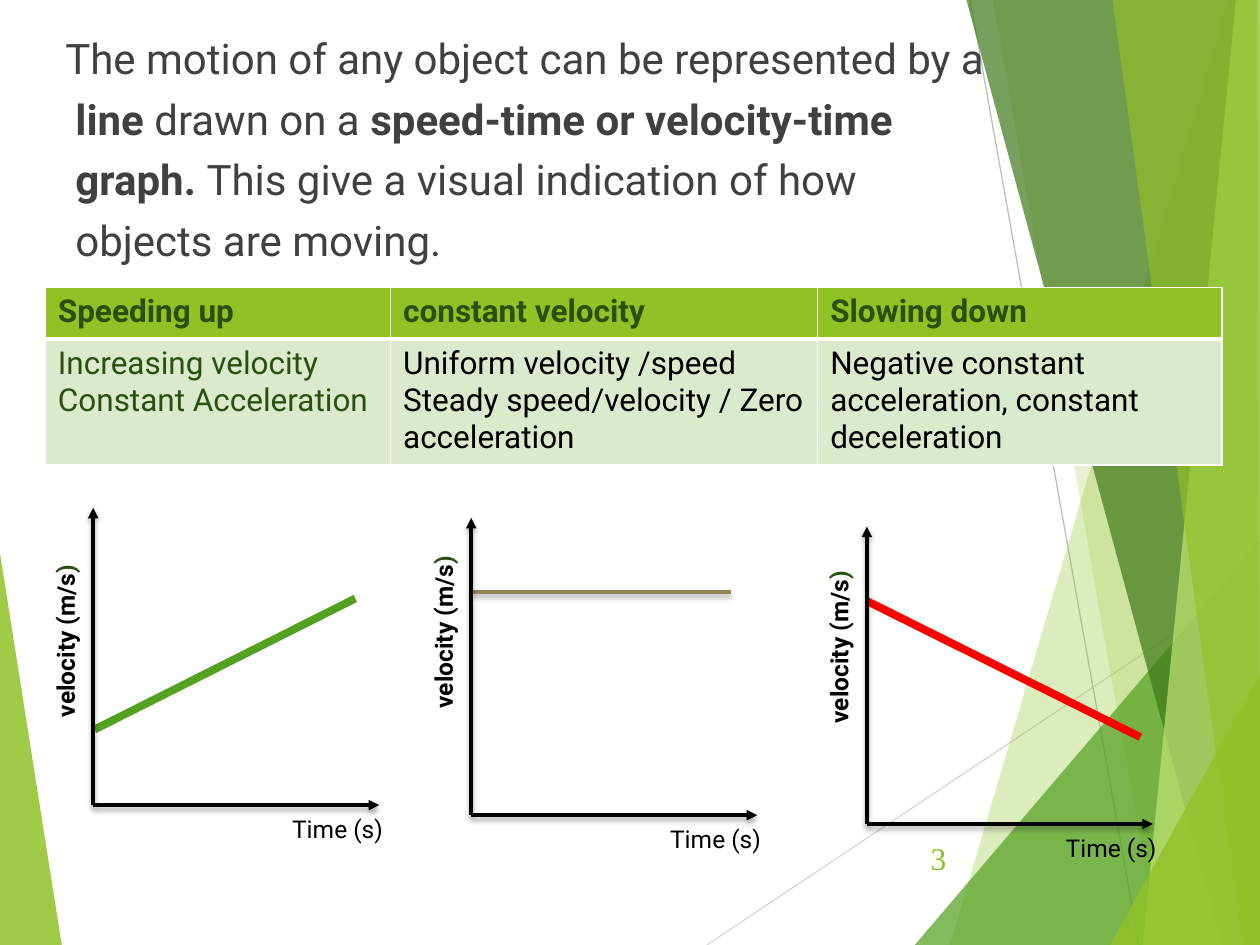
"""Build a slide comparing three velocity-time graphs."""
from lxml import etree
from pptx import Presentation
from pptx.dml.color import RGBColor
from pptx.enum.shapes import MSO_CONNECTOR
from pptx.enum.text import MSO_ANCHOR, PP_ALIGN
from pptx.oxml.ns import qn
from pptx.util import Inches, Pt

STRAIGHT = MSO_CONNECTOR.STRAIGHT
MIDDLE = MSO_ANCHOR.MIDDLE
RIGHT = PP_ALIGN.RIGHT
FONT = "Roboto"
COLORS = {
    "lime": "90C226", "green": "54A021", "forest": "3F7819", "pale": "C0E474",
    "dark": "2A5010", "mint": "DBE9CD", "body": "404040", "black": "000000",
    "white": "FFFFFF", "silver": "D9D9D9", "gray": "BFBFBF",
    "olive": "918655", "red": "FF0000",
}
RGB = {name: RGBColor.from_string(value) for name, value in COLORS.items()}

presentation = Presentation()
presentation.slide_width = Inches(10)
presentation.slide_height = Inches(7.5)
slide = presentation.slides.add_slide(presentation.slide_layouts[6])
shapes = slide.shapes


def add_line(start, end, color, width, arrow=False, shadow=False):
    line = shapes.add_connector(STRAIGHT, *map(Inches, start + end))
    line.line.color.rgb = RGB[color]
    line.line.width = Pt(width)
    properties = line._element.spPr
    if arrow:
        etree.SubElement(properties.find(qn("a:ln")), qn("a:tailEnd"), type="triangle")
    effects = etree.SubElement(properties, qn("a:effectLst"))
    if shadow:
        outer = etree.SubElement(
            effects, qn("a:outerShdw"), blurRad=str(Pt(3)), dist=str(Pt(2)),
            dir="5400000", rotWithShape="0")
        shade = etree.SubElement(outer, qn("a:srgbClr"), val=COLORS["black"])
        etree.SubElement(shade, qn("a:alpha"), val="35000")


def add_text(box, runs, size, color, font=FONT):
    shape = shapes.add_textbox(*map(Inches, box))
    shape.text_frame.word_wrap = True
    paragraph = shape.text_frame.paragraphs[0]
    paragraph.font.size = Pt(size)
    paragraph.font.name = font
    paragraph.font.color.rgb = RGB[color]
    for text, bold in runs:
        run = paragraph.add_run()
        run.text = text
        run.font.bold = bold
    return shape, paragraph


facets = [
    ("lime", 85, [(0, 4.39), (0.49, 7.5), (0, 7.5)]),
    ("lime", 30, [(9.75, 0), (7.54, 7.5), (10, 7.5), (10, 0)]),
    ("lime", 20, [(7.88, 0), (9.19, 7.5), (10, 7.5), (10, 0)]),
    ("green", 72, [(7.26, 7.5), (10, 4.29), (10, 7.5)]),
    ("forest", 70, [(7.67, 0), (9.7, 7.5), (10, 7.5), (10, 0)]),
    ("pale", 70, [(9.81, 0), (9.07, 7.5), (10, 7.5), (10, 0)]),
    ("lime", 65, [(8.83, 0), (9.86, 7.5), (10, 7.5), (9.98, 0)]),
    ("lime", 80, [(8.81, 7.5), (10, 5.35), (10, 7.5)]),
]
add_line((5.61, 7.5), (10, 4.57), "silver", 0.75)
add_line((7.7, 0), (9.04, 7.5), "gray", 0.75)
for color, opacity, points in facets:
    corners = [(Inches(x), Inches(y)) for x, y in points]
    builder = shapes.build_freeform(*corners[0])
    builder.add_line_segments(corners[1:], close=True)
    facet = builder.convert_to_shape()
    facet.shadow.inherit = False
    facet.fill.solid()
    facet.fill.fore_color.rgb = RGB[color]
    facet.line.fill.background()
    fill_color = facet._element.spPr.find(qn("a:solidFill")).find(qn("a:srgbClr"))
    etree.SubElement(fill_color, qn("a:alpha"), val=str(opacity * 1000))

introduction, paragraph = add_text((0.12, 0.13, 7.88, 2.05), [
    ("The motion of any object can be represented by a ", False),
    ("line ", True),
    ("drawn on a ", False),
    ("speed-time or velocity-time graph. ", True),
    ("This give a visual indication of how objects are moving.", False),
], 24, "body")
paragraph.line_spacing = 1.2
paragraph.space_before = Pt(10)
indents = paragraph._p.get_or_add_pPr()
indents.set("marL", str(Inches(0.38)))
indents.set("indent", str(Inches(-0.08)))

number, paragraph = add_text(
    (7.05, 6.61, 0.56, 0.4), [("3", False)], 18, "lime", "Times New Roman")
number.text_frame.vertical_anchor = MIDDLE
paragraph.alignment = RIGHT

graphs = [
    ((0.74, 6.39), (0.75, 5.79), (2.82, 4.75), "green", 4.5, False, 5.79),
    ((3.74, 6.47), (3.74, 4.7), (5.8, 4.7), "olive", 2, True, 5.72),
    ((6.88, 6.54), (6.88, 4.77), (9.05, 5.85), "red", 4.5, False, 5.84),
]
label_width, label_height = 1.88, 0.34
for origin, start, end, color, width, shadow, label_bottom in graphs:
    x, y = origin
    add_line(start, end, color, width, shadow=shadow)
    for tip in ((x, y - 2.36), (x + 2.27, y)):
        add_line(origin, tip, "black", 2, arrow=True, shadow=True)
    add_text((x + 1.48, y + 0.02, 1.28, 0.33), [("Time (s)", False)], 14, "black")
    label_left = x - 0.22 - label_width / 2
    label_top = label_bottom - (label_width + label_height) / 2
    label, paragraph = add_text(
        (label_left, label_top, label_width, label_height),
        [("velocity (m/s", True), (")", True)], 14, "black")
    paragraph.runs[1].font.color.rgb = RGB["dark"]
    label.rotation = 270

rows = [
    ["Speeding up", "constant velocity", "Slowing down"],
    ["Increasing velocity\nConstant Acceleration",
     "Uniform velocity /speed\nSteady speed/velocity / Zero acceleration",
     "Negative constant acceleration, constant\ndeceleration"],
]
table = shapes.add_table(
    2, 3, Inches(0.36), Inches(2.28), Inches(9.34), Inches(1.41)).table
for column, width in zip(table.columns, (2.74, 3.39, 3.21)):
    column.width = Inches(width)
for row, height in zip(table.rows, (0.41, 1)):
    row.height = Inches(height)
for row_index, texts in enumerate(rows):
    header = row_index == 0
    thick_side = "lnB" if header else "lnT"
    for column_index, text in enumerate(texts):
        cell = table.cell(row_index, column_index)
        cell.text = text
        for paragraph in cell.text_frame.paragraphs:
            paragraph.font.size = Pt(18)
            paragraph.font.name = FONT
            paragraph.font.bold = header
            paragraph.font.color.rgb = RGB["dark" if header or column_index == 0 else "black"]
        cell_properties = cell._tc.get_or_add_tcPr()
        for side in ("lnL", "lnR", "lnT", "lnB"):
            weight = Pt(3 if side == thick_side else 1)
            border = etree.SubElement(cell_properties, qn("a:" + side), w=str(weight))
            border_fill = etree.SubElement(border, qn("a:solidFill"))
            etree.SubElement(border_fill, qn("a:srgbClr"), val=COLORS["white"])
        cell.fill.solid()
        cell.fill.fore_color.rgb = RGB["lime" if header else "mint"]

presentation.save("out.pptx")
